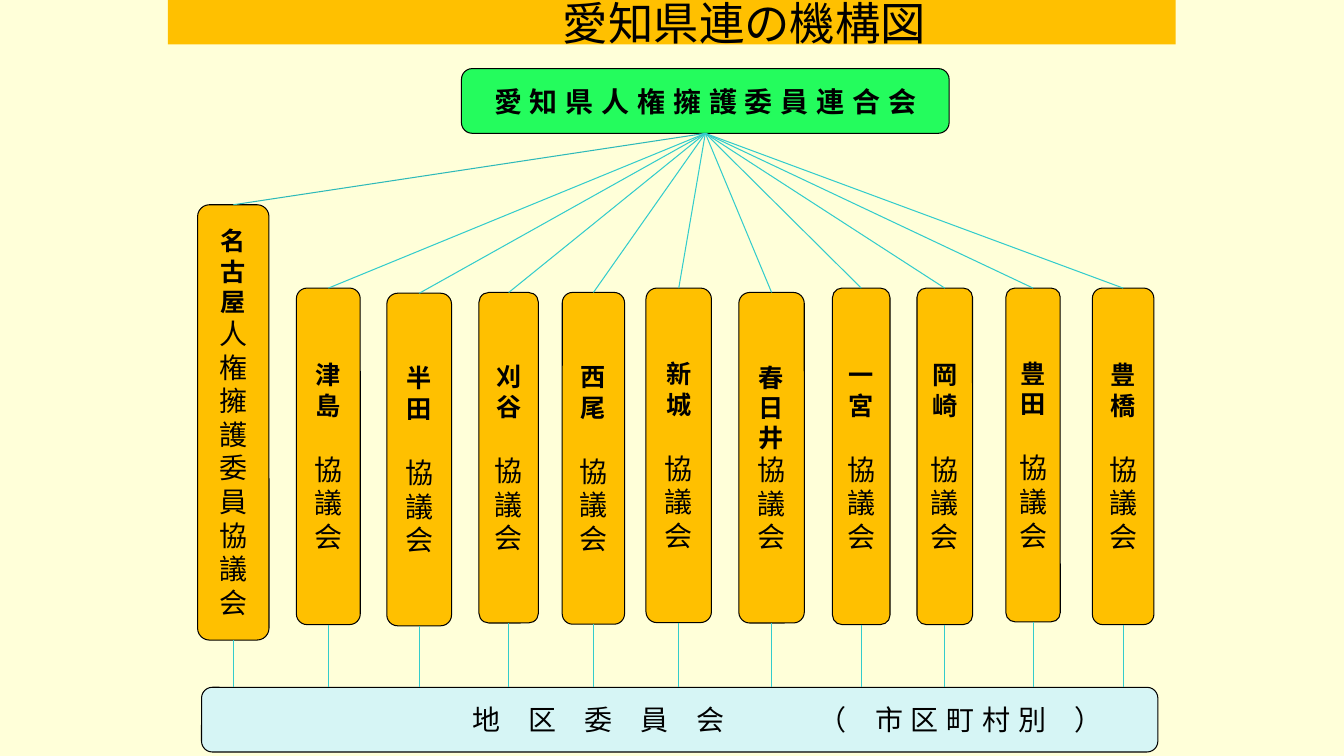
from lxml.etree import SubElement
from pptx import Presentation
from pptx.dml.color import RGBColor
from pptx.enum.shapes import MSO_CONNECTOR, MSO_SHAPE
from pptx.enum.text import MSO_ANCHOR, PP_ALIGN
from pptx.oxml.ns import qn
from pptx.util import Cm, Pt

CREAM = RGBColor(0xFF, 0xFF, 0xD9)
AMBER = RGBColor(0xFF, 0xC0, 0x00)
GREEN = RGBColor(0x24, 0xFC, 0x5D)
ICE = RGBColor(0xD6, 0xF5, 0xF5)
TEAL = RGBColor(0x33, 0xCC, 0xCC)
DEEP_TEAL = RGBColor(0x2D, 0xB9, 0xB9)
BLACK = RGBColor(0x00, 0x00, 0x00)

FONT = "Arial"
MARGINS = ("margin_left", "margin_top", "margin_right", "margin_bottom")
COUNCIL = "協議会"
COUNCILS = [
    ("名古屋", "人権擁護委員" + COUNCIL, (4.98, 5.16, 1.8, 10.97)),
    ("津島", COUNCIL, (7.47, 7.26, 1.61, 8.48)),
    ("半田", COUNCIL, (9.75, 7.39, 1.63, 8.38)),
    ("刈谷", COUNCIL, (12.07, 7.37, 1.5, 8.33)),
    ("西尾", COUNCIL, (14.17, 7.37, 1.57, 8.36)),
    ("新城", COUNCIL, (16.28, 7.26, 1.65, 8.43)),
    ("春日井", COUNCIL, (18.62, 7.37, 1.65, 8.33)),
    ("一宮", COUNCIL, (20.98, 7.26, 1.45, 8.48)),
    ("岡崎", COUNCIL, (23.11, 7.26, 1.4, 8.48)),
    ("豊田", COUNCIL, (25.35, 7.26, 1.37, 8.41)),
    ("豊橋", COUNCIL, (27.53, 7.26, 1.55, 8.48)),
]


def set_attrs(obj, values):
    """Set each named attribute of an object."""
    for name, value in values.items():
        setattr(obj, name, value)


def add_box(s, kind, box, fill, outlined=True):
    """Add a filled shape without text margins."""
    sp = s.shapes.add_shape(kind, *map(Cm, box))
    sp.shadow.inherit = False
    sp.fill.solid()
    sp.fill.fore_color.rgb = fill
    if outlined:
        sp.line.color.rgb = BLACK
        sp.line.width = Pt(0.75)
    else:
        sp.line.fill.background()
    set_attrs(sp.text_frame, dict.fromkeys(MARGINS, 0))
    set_attrs(sp.text_frame, {"vertical_anchor": MSO_ANCHOR.MIDDLE, "word_wrap": False})
    return sp


def write(p, text, size, bold=False, align=PP_ALIGN.CENTER):
    """Write one formatted run in a paragraph."""
    p.alignment = align
    r = p.add_run()
    r.text = text
    set_attrs(r.font, {"name": FONT, "size": Pt(size), "bold": bold})
    r.font.color.rgb = BLACK
    SubElement(r.font._element, qn("a:ea")).set("typeface", FONT)


def add_title(s, box):
    """Place the title band, its text shifted to the right of centre."""
    sp = add_box(s, MSO_SHAPE.RECTANGLE, box, AMBER, outlined=False)
    sp.text_frame.margin_left = Cm(3.66)
    write(sp.text_frame.paragraphs[0], "愛知県連の機構図", 32.4)


def add_federation(s, box):
    """Place the federation box at the head of the tree."""
    sp = add_box(s, MSO_SHAPE.ROUNDED_RECTANGLE, box, GREEN)
    write(sp.text_frame.paragraphs[0], "愛 知 県 人 権 擁 護 委 員 連 合 会", 20, bold=True)
    return sp


def add_council(s, box, city, suffix):
    """Place a council column, one character to a line."""
    sp = add_box(s, MSO_SHAPE.ROUNDED_RECTANGLE, box, AMBER)
    tf = sp.text_frame
    for i, char in enumerate(city + suffix):
        p = tf.add_paragraph() if i else tf.paragraphs[0]
        in_city = i < len(city)
        size = 18 if in_city else 20
        write(p, char, size, bold=in_city)
        p.line_spacing = Pt(size * 1.2)
        if i == len(city) == 2:
            p.space_before = Pt(23)
    return sp


def add_districts(s, box):
    """Place the district committee bar with its note at a tab stop."""
    sp = add_box(s, MSO_SHAPE.ROUNDED_RECTANGLE, box, ICE)
    set_attrs(sp.text_frame, {"margin_left": Cm(6.74), "word_wrap": True})
    p = sp.text_frame.paragraphs[0]
    write(p, "地　区　委　員　会\t（　市 区 町 村 別　）", 20, align=PP_ALIGN.LEFT)
    tabs = SubElement(p._p.get_or_add_pPr(), qn("a:tabLst"))
    tab = SubElement(tabs, qn("a:tab"))
    tab.set("pos", str(Cm(8.74)))
    tab.set("algn", "l")
    return sp


def add_link(s, start, end, color):
    """Add a thin straight connector between two points."""
    cn = s.shapes.add_connector(MSO_CONNECTOR.STRAIGHT, *start, *end)
    cn.line.color.rgb = color
    cn.line.width = Pt(0.75)
    SubElement(cn._element.spPr, qn("a:effectLst"))
    return cn


def add_tree(s):
    """Place the federation, councils and districts with their links."""
    federation = add_federation(s, (11.63, 1.73, 12.29, 1.63))
    districts = add_districts(s, (5.08, 17.32, 24.1, 1.63))
    hub = (federation.left + federation.width // 2, federation.top + federation.height)
    for i, (city, suffix, box) in enumerate(COUNCILS):
        council = add_council(s, box, city, suffix)
        x = council.left + council.width // 2
        link = add_link(s, hub, (x, council.top), TEAL if i else DEEP_TEAL)
        link.begin_connect(federation, 2)
        link.end_connect(council, 0)
        drop = add_link(s, (x, council.top + council.height), (x, districts.top), TEAL)
        drop.begin_connect(council, 2)


def main():
    """Build and save the organisation chart."""
    prs = Presentation()
    set_attrs(prs, {"slide_width": Cm(33.87), "slide_height": Cm(19.05)})
    s = prs.slides.add_slide(prs.slide_layouts[6])
    s.background.fill.solid()
    s.background.fill.fore_color.rgb = CREAM
    add_title(s, (4.23, 0, 25.4, 1.12))
    add_tree(s)
    prs.save("out.pptx")


if __name__ == "__main__":
    main()
